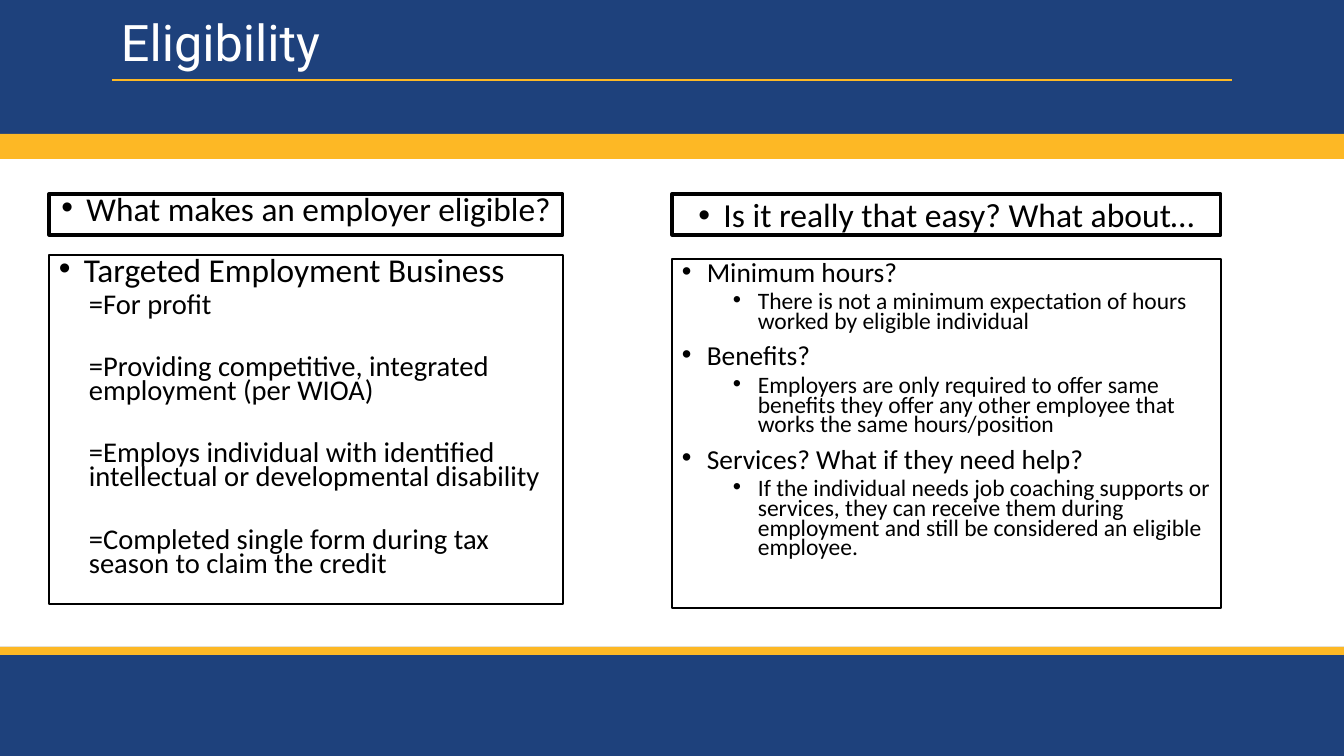
from lxml import etree
from pptx import Presentation
from pptx.dml.color import RGBColor
from pptx.enum.shapes import MSO_CONNECTOR, MSO_SHAPE
from pptx.enum.text import MSO_ANCHOR, PP_ALIGN as ALIGN
from pptx.oxml.ns import qn
from pptx.util import Pt

PX = 9071.43  # EMU per px, 100.8 px to the inch
WIDTH, HEIGHT = 1344, 756
BLUE, GOLD, BLACK, WHITE = "1E417C", "FDB825", "000000", "FFFFFF"


def px(n):
    return round(n * PX)


def rgb(color):
    return RGBColor.from_string(color)


def add_rect(slide, box, fill=None, line=None, weight=1.0):
    sp = slide.shapes.add_shape(MSO_SHAPE.RECTANGLE, *map(px, box))
    sp.shadow.inherit = False
    if fill:
        sp.fill.solid()
        sp.fill.fore_color.rgb = rgb(fill)
    else:
        sp.fill.background()
    if line:
        sp.line.color.rgb = rgb(line)
        sp.line.width = Pt(weight)
    else:
        sp.line.fill.background()
    return sp


def add_text(tf, text, size, font="Calibri", color=BLACK, align=ALIGN.LEFT,
             left=0, bullet=False, level=0, spacing=0.7, before=0):
    """Fill the first paragraph of the frame, or add one after it."""
    first = not tf.paragraphs[0].runs
    p = tf.paragraphs[0] if first else tf.add_paragraph()
    pPr = p._p.get_or_add_pPr()
    pPr.set("marL", str(px(left)))
    pPr.set("indent", str(px(-25 if bullet else 0)))
    if bullet:
        bu_font = etree.SubElement(pPr, qn("a:buFont"))
        bu_font.set("typeface", "Arial")
        etree.SubElement(pPr, qn("a:buChar")).set("char", "•")
    else:
        etree.SubElement(pPr, qn("a:buNone"))
    p.level, p.alignment, p.line_spacing = level, align, spacing
    p.space_before = Pt(0 if first else before)
    r = p.add_run()
    r.text = text
    r.font.name, r.font.size = font, Pt(size)
    r.font.color.rgb = rgb(color)


def add_frame(slide, box, weight):
    """Outlined box whose text starts at the top."""
    tf = add_rect(slide, box, line=BLACK, weight=weight).text_frame
    tf.word_wrap = True
    tf.vertical_anchor = MSO_ANCHOR.TOP
    return tf


def add_bands(slide, box):
    x, y, w, h = box
    bands = [(0, 143, BLUE), (h - 109, 109, BLUE), (134, 25, GOLD), (h - 109, 8, GOLD)]
    for top, height, color in bands:
        add_rect(slide, (x, y + top, w, height), fill=color)


def add_title(slide, box, text):
    x, y, w, h = box
    tf = slide.shapes.add_textbox(*map(px, box)).text_frame
    tf.word_wrap = True
    tf.vertical_anchor = MSO_ANCHOR.MIDDLE
    add_text(tf, text, 36, font="Roboto", color=WHITE, spacing=0.9)
    # Rule under the title
    rule = slide.shapes.add_connector(
        MSO_CONNECTOR.STRAIGHT, *map(px, (x + 1, y + h, x + w - 2, y + h)))
    rule.line.color.rgb = rgb(GOLD)
    rule.line.width = Pt(1)
    etree.SubElement(rule._element.spPr, qn("a:effectLst"))


def add_column(slide, box, heading, heading_format, body_top, body):
    """A heading box with a body box below it; body lists (text, format) pairs."""
    x, y, w, h = box
    tf = add_frame(slide, (x, y, w, 41), 2.25)
    add_text(tf, heading, align=ALIGN.CENTER, left=25, bullet=True, **heading_format)
    tf = add_frame(slide, (x, y + body_top, w, h - body_top), 1.5)
    for text, text_format in body:
        add_text(tf, text, **text_format)


def main():
    prs = Presentation()
    prs.slide_width, prs.slide_height = px(WIDTH), px(HEIGHT)
    slide = prs.slides.add_slide(prs.slide_layouts[6])

    add_bands(slide, (0, 0, WIDTH, HEIGHT))

    # Employer column
    topic = dict(size=23.8, left=25, bullet=True)
    rule = dict(size=20.4, left=30, level=1, before=5)
    spaced_rule = dict(rule, before=27.4)
    add_column(slide, (49, 194, 514, 410), "What makes an employer eligible?",
               dict(size=23.8), 61, [
        ("Targeted Employment Business", topic),
        ("=For profit", rule),
        ("=Providing competitive, integrated employment (per WIOA)", spaced_rule),
        ("=Employs individual with identified intellectual or developmental disability",
         spaced_rule),
        ("=Completed single form during tax season to claim the credit", spaced_rule),
    ])

    # Questions column
    question = dict(size=19.6, left=25, bullet=True, before=10)
    answer = dict(size=16.8, left=76, bullet=True, level=1, before=5)
    add_column(slide, (672, 194, 549, 414), "Is it really that easy? What about…",
               dict(size=24, spacing=0.9), 65, [
        ("Minimum hours?", question),
        ("There is not a minimum expectation of hours worked by eligible individual",
         answer),
        ("Benefits?", question),
        ("Employers are only required to offer same benefits they offer any other "
         "employee that works the same hours/position", answer),
        ("Services? What if they need help?", question),
        ("If the individual needs job coaching supports or services, they can receive "
         "them during employment and still be considered an eligible employee.", answer),
    ])

    add_title(slide, (111, 10, 1123, 70), "Eligibility")
    prs.save("out.pptx")


if __name__ == "__main__":
    main()
